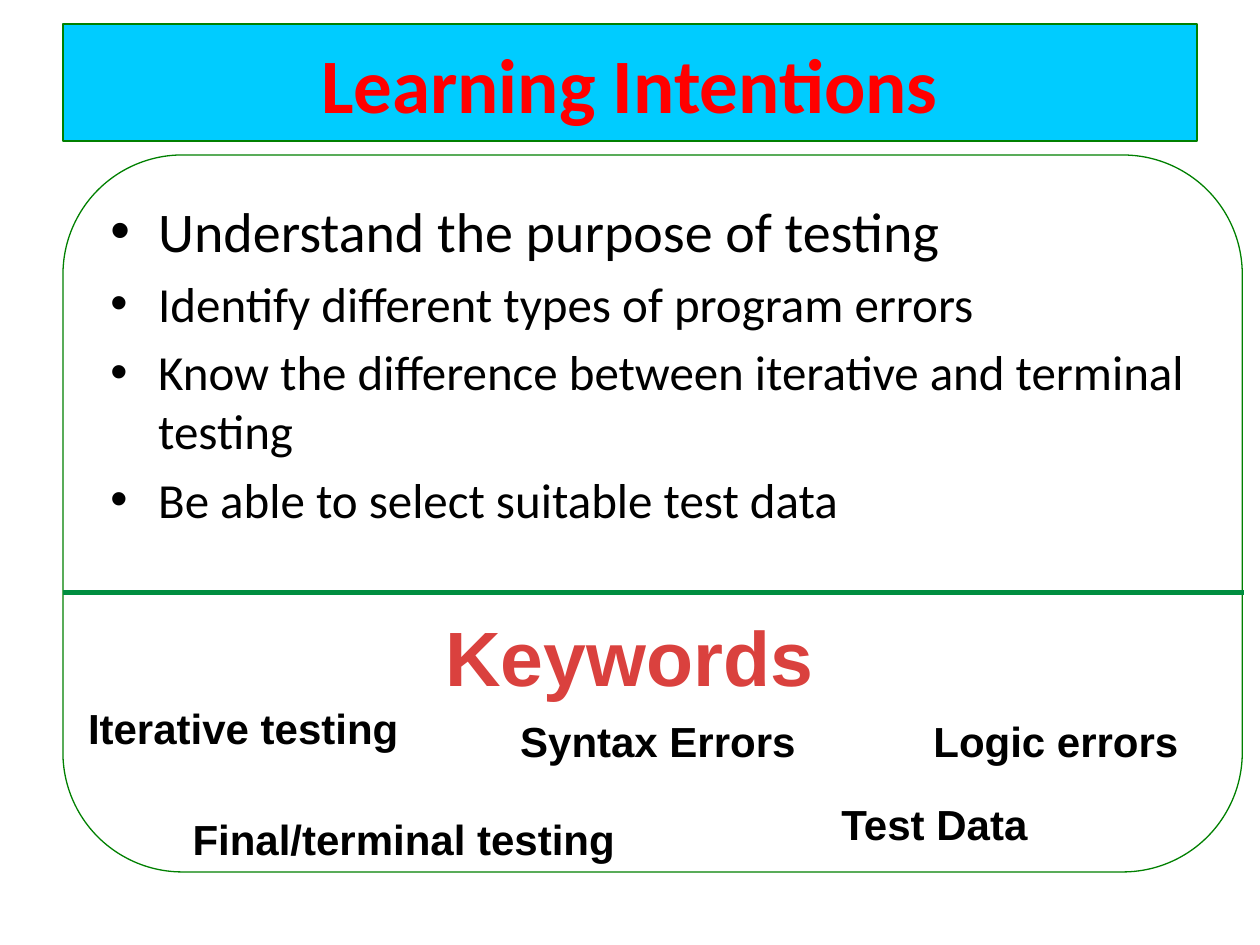
from lxml.etree import SubElement
from pptx import Presentation
from pptx.dml.color import RGBColor
from pptx.enum.shapes import MSO_CONNECTOR, MSO_SHAPE
from pptx.enum.text import MSO_ANCHOR, MSO_AUTO_SIZE, PP_ALIGN
from pptx.oxml.ns import qn
from pptx.util import Inches, Pt

COLOURS = {
    "banner": "00CCFF",
    "outline": "008000",
    "divider": "008E40",
    "title": "FF0000",
    "heading": "DA413E",
    "text": "000000",
}


class SlideBuilder:
    def __init__(self, slide):
        self.slide = slide

    def colour(self, name):
        return RGBColor.from_string(COLOURS[name])

    def style(self, paragraph, face, size, colour, bold=False):
        font = paragraph.font
        font.name, font.size, font.bold = face, Pt(size), bold
        font.color.rgb = self.colour(colour)

    def panel(self, kind, left, top, width, height, fill=None):
        """Add an outlined shape and return its text frame."""
        shape = self.slide.shapes.add_shape(
            kind, Inches(left), Inches(top), Inches(width), Inches(height))
        shape.shadow.inherit = False
        if fill:
            shape.fill.solid()
            shape.fill.fore_color.rgb = self.colour(fill)
        else:
            shape.fill.background()
        shape.line.color.rgb = self.colour("outline")
        shape.line.width = Pt(0.75)
        shape.text_frame.word_wrap = True
        return shape.text_frame

    def banner(self, text, *box):
        frame = self.panel(MSO_SHAPE.RECTANGLE, *box, fill="banner")
        frame.vertical_anchor = MSO_ANCHOR.MIDDLE
        paragraph = frame.paragraphs[0]
        paragraph.text = text
        paragraph.alignment = PP_ALIGN.CENTER
        self.style(paragraph, "Calibri", 44, "title", bold=True)

    def bullet_panel(self, items, *box):
        """Add a rounded panel of bullets from (text, size) pairs."""
        frame = self.panel(MSO_SHAPE.ROUNDED_RECTANGLE, *box)
        frame.vertical_anchor = MSO_ANCHOR.TOP
        for index, (text, size) in enumerate(items):
            paragraph = frame.add_paragraph() if index else frame.paragraphs[0]
            paragraph.text = text
            paragraph.alignment = PP_ALIGN.LEFT
            properties = paragraph._p.get_or_add_pPr()
            properties.set("marL", str(Inches(0.38)))
            properties.set("indent", str(Inches(-0.38)))
            SubElement(properties, qn("a:buFont"), typeface="Arial")
            SubElement(properties, qn("a:buChar"), char="•")
            if index:
                paragraph.space_before = Pt(0.2 * size)
            self.style(paragraph, "Calibri", size, "text")

    def divider(self, left, right, y):
        line = self.slide.shapes.add_connector(
            MSO_CONNECTOR.STRAIGHT, Inches(left), Inches(y), Inches(right), Inches(y))
        line.line.color.rgb = self.colour("divider")
        line.line.width = Pt(3)
        SubElement(line._element.spPr, qn("a:effectLst"))

    def label(self, text, left, top, width, height=0.5, size=24,
              colour="text", align=PP_ALIGN.LEFT):
        box = self.slide.shapes.add_textbox(
            Inches(left), Inches(top), Inches(width), Inches(height))
        frame = box.text_frame
        frame.word_wrap = False
        frame.auto_size = MSO_AUTO_SIZE.SHAPE_TO_FIT_TEXT
        paragraph = frame.paragraphs[0]
        paragraph.text = text
        paragraph.alignment = align
        self.style(paragraph, "Arial", size, colour, bold=True)


def main():
    presentation = Presentation()
    presentation.slide_width, presentation.slide_height = Inches(10), Inches(7.5)
    builder = SlideBuilder(presentation.slides.add_slide(presentation.slide_layouts[6]))

    builder.banner("Learning Intentions", 0.5, 0.19, 9, 0.93)
    intentions = [
        ("Understand the purpose of testing", 32),
        ("Identify different types of program errors", 28),
        ("Know the difference between iterative and terminal testing", 28),
        ("Be able to select suitable test data", 28),
    ]
    builder.bullet_panel(intentions, 0.5, 1.23, 9.36, 5.69)
    builder.divider(0.5, 9.87, 4.7)

    builder.label("Keywords", 3.42, 4.79, 3.15, 0.84, size=44,
                  colour="heading", align=PP_ALIGN.CENTER)
    keywords = [
        ("Iterative testing", 0.6, 5.53, 2.69),
        ("Syntax Errors", 4.03, 5.63, 2.41),
        ("Final/terminal testing", 1.43, 6.41, 3.58),
        ("Test Data", 6.58, 6.29, 1.69),
        ("Logic errors", 7.31, 5.63, 2.17),
    ]
    for keyword in keywords:
        builder.label(*keyword)

    presentation.save("out.pptx")


if __name__ == "__main__":
    main()
